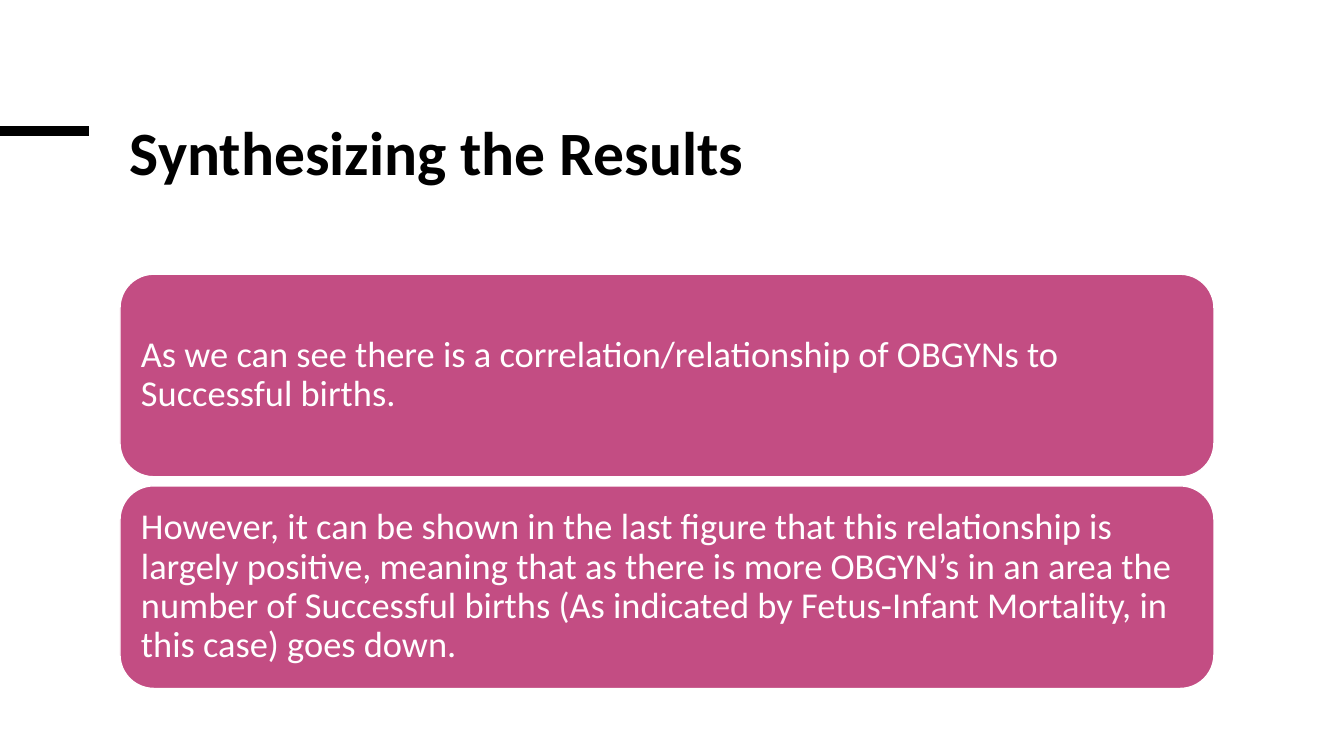
from lxml import etree
from pptx import Presentation
from pptx.dml.color import RGBColor
from pptx.enum.shapes import MSO_CONNECTOR, MSO_SHAPE
from pptx.enum.text import MSO_ANCHOR, PP_ALIGN
from pptx.oxml.ns import qn
from pptx.util import Inches, Pt

# Content
TITLE = "Synthesizing the Results"
FINDINGS = [
    "As we can see there is a correlation/relationship of OBGYNs to Successful births.",
    "However, it can be shown in the last figure that this relationship is largely "
    "positive, meaning that as there is more OBGYN’s in an area the number of "
    "Successful births (As indicated by Fetus-Infant Mortality, in this case) goes down.",
]

# Style and layout, in inches
BLACK = RGBColor(0x00, 0x00, 0x00)
WHITE = RGBColor(0xFF, 0xFF, 0xFF)
PINK = RGBColor(0xC3, 0x4D, 0x83)
FONT = "Calibri"
LEFT, WIDTH = 1.19, 10.85
CARD_TOP, CARD_HEIGHT, CARD_GAP = 2.72, 2.01, 0.09
CARD_INSET = 0.11


def write(frame, text, size, color, spacing, bold=False):
    frame.word_wrap = True
    para = frame.paragraphs[0]
    para.alignment = PP_ALIGN.LEFT
    para.line_spacing = spacing
    span = para.add_run()
    span.text = text
    span.font.name = FONT
    span.font.size = Pt(size)
    span.font.bold = bold
    span.font.color.rgb = color


deck = Presentation()
deck.slide_width, deck.slide_height = Inches(13.33), Inches(7.5)
page = deck.slides.add_slide(deck.slide_layouts[6])

# Accent bar at the left edge
bar = page.shapes.add_connector(
    MSO_CONNECTOR.STRAIGHT, Inches(0), Inches(1.3), Inches(0.88), Inches(1.3))
bar.line.color.rgb = BLACK
bar.line.width = Pt(6.75)
etree.SubElement(bar.element.spPr, qn("a:effectLst"))

# Title
title = page.shapes.add_textbox(Inches(LEFT), Inches(1.19), Inches(WIDTH), Inches(1.42))
title.text_frame.vertical_anchor = MSO_ANCHOR.TOP
write(title.text_frame, TITLE, 44, BLACK, 0.85, bold=True)

# Finding cards, stacked
for index, finding in enumerate(FINDINGS):
    top = CARD_TOP + index * (CARD_HEIGHT + CARD_GAP)
    card = page.shapes.add_shape(
        MSO_SHAPE.ROUNDED_RECTANGLE,
        Inches(LEFT), Inches(top), Inches(WIDTH), Inches(CARD_HEIGHT))
    card.shadow.inherit = False
    card.fill.solid()
    card.fill.fore_color.rgb = PINK
    card.line.color.rgb = WHITE
    card.line.width = Pt(1)
    frame = card.text_frame
    frame.vertical_anchor = MSO_ANCHOR.MIDDLE
    frame.margin_left = frame.margin_right = Inches(CARD_INSET)
    frame.margin_top = frame.margin_bottom = Inches(CARD_INSET)
    write(frame, finding, 26, WHITE, 0.9)

deck.save("out.pptx")
